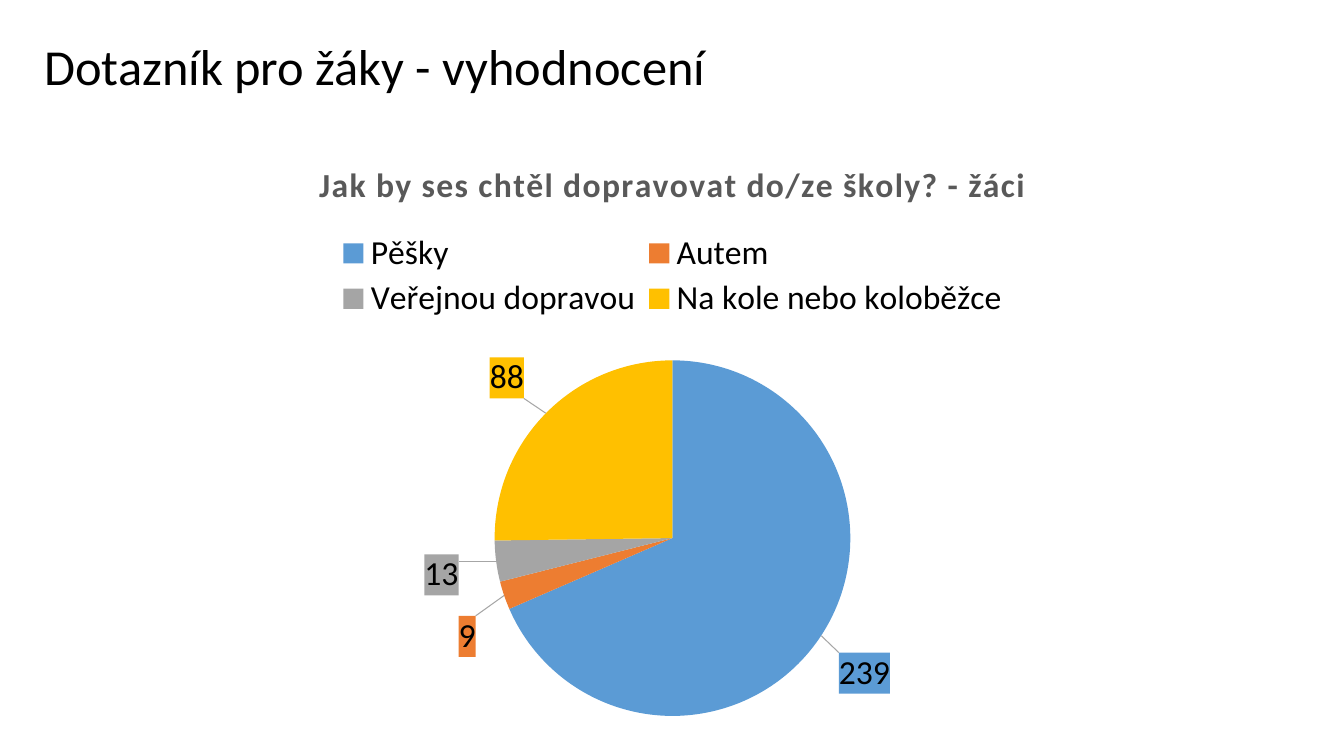
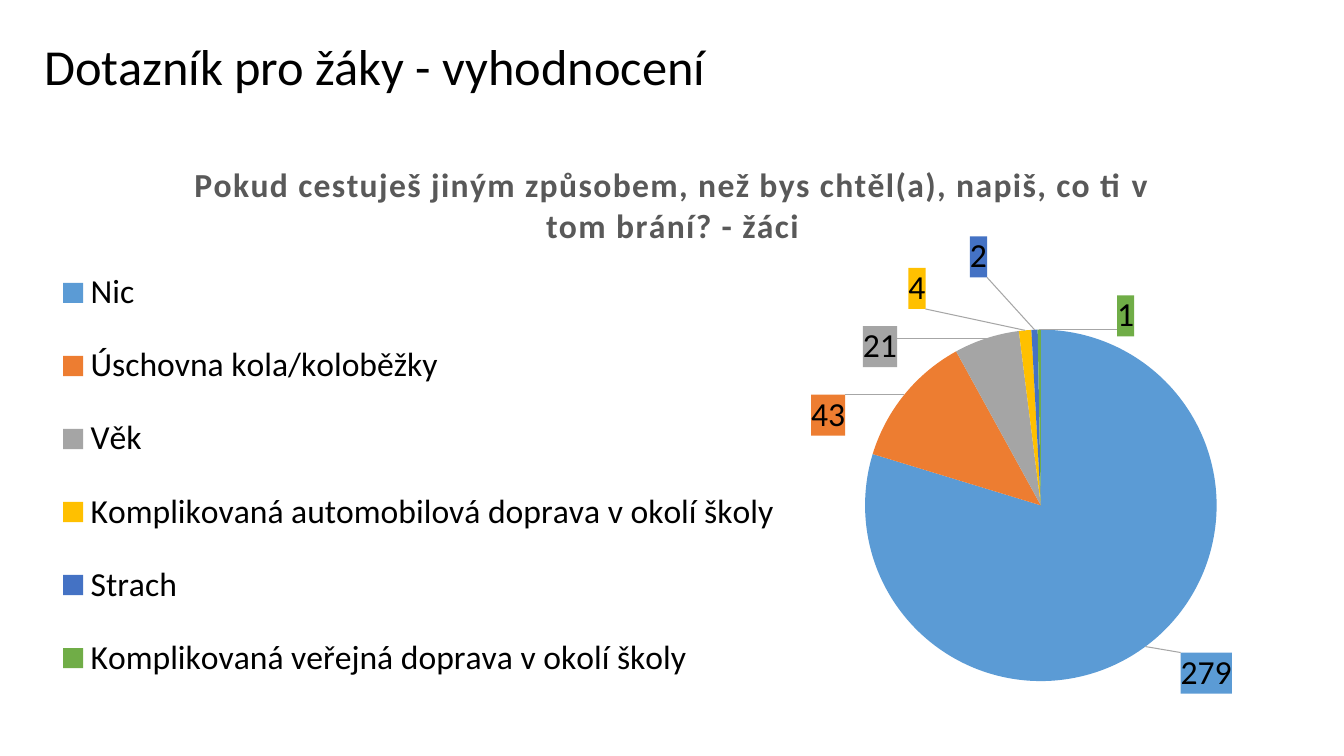
from lxml import etree
from pptx import Presentation
from pptx.chart.data import CategoryChartData
from pptx.dml.color import RGBColor
from pptx.enum.chart import XL_CHART_TYPE, XL_LABEL_POSITION, XL_LEGEND_POSITION
from pptx.enum.text import MSO_ANCHOR
from pptx.oxml import parse_xml
from pptx.oxml.ns import nsdecls, qn
from pptx.util import Inches, Pt

PIE = XL_CHART_TYPE.PIE
OUTSIDE = XL_LABEL_POSITION.OUTSIDE_END
TOP = XL_LEGEND_POSITION.TOP
MIDDLE = MSO_ANCHOR.MIDDLE

COLORS = {
    "text": "000000", "question": "595959", "leader": "A6A6A6",
    "blue": "5B9BD5", "orange": "ED7D31", "gray": "A5A5A5",
    "yellow": "FFC000", "navy": "4472C4", "green": "70AD47",
}
SLICES = ["blue", "orange", "gray", "yellow", "navy", "green"]
WIDTH, HEIGHT = 13.33, 7.5
TITLE_BOX = (0.34, 0, 12.99, 1.38)
CHART_BOX = (0.37, 1.38, 12.6, 5.91)
TITLE = "Dotazník pro žáky - vyhodnocení"
TITLE_FONT = {"name": "Calibri", "size": Pt(36)}
CHART_FONT = {"name": "Calibri", "size": Pt(24), "bold": False}
QUESTION_FONT = {"name": "Calibri", "size": Pt(24), "bold": True}

# Plot and legend: x, y, w, h as shares of the chart.
# Answers: text, count, label shift right and down in percent of the chart.
QUESTIONS = [
    {
        "question": "Jak by ses chtěl dopravovat do/ze školy? - žáci",
        "plot": (0.36, 0.37, 0.28, 0.6),
        "legend": (0.23, 0.15, 0.54, 0.16),
        "answers": [
            ("Pěšky", 239, 1, 2.3),
            ("Autem", 9, -1.8, 3.1),
            ("Veřejnou dopravou", 13, -2.5, -1.3),
            ("Na kole nebo koloběžce", 88, -1.4, -1.8),
        ],
    },
    {
        "question": "Pokud cestuješ jiným způsobem, než bys chtěl(a), "
                    "napiš, co ti v tom brání? - žáci",
        "plot": (0.65, 0.32, 0.28, 0.59),
        "legend": (0.01, 0.17, 0.58, 0.79),
        "answers": [
            ("Nic", 279, 2.5, 0.2),
            ("Úschovna kola/koloběžky", 43, -4.3, 7.5),
            ("Věk", 21, -6.9, 5.8),
            ("Komplikovaná automobilová doprava v okolí školy", 4, -7.8, -2.6),
            ("Strach", 2, -4.4, -7.8),
            ("Komplikovaná veřejná doprava v okolí školy", 1, 6.8, 2.1),
        ],
    },
]


def style(font, values, color):
    for name, value in values.items():
        setattr(font, name, value)
    font.color.rgb = RGBColor.from_string(COLORS[color])


def manual_layout(tags, values):
    layout = parse_xml(f"<c:layout {nsdecls('c')}><c:manualLayout/></c:layout>")
    for tag, value in zip(tags, values):
        etree.SubElement(layout[0], qn(f"c:{tag}")).set("val", str(value))
    return layout


deck = Presentation()
deck.slide_width, deck.slide_height = Inches(WIDTH), Inches(HEIGHT)

for item in QUESTIONS:
    page = deck.slides.add_slide(deck.slide_layouts[6])

    # Slide title
    box = page.shapes.add_textbox(*map(Inches, TITLE_BOX))
    frame = box.text_frame
    frame.word_wrap = True
    frame.vertical_anchor = MIDDLE
    para = frame.paragraphs[0]
    para.line_spacing = 0.9
    span = para.add_run()
    span.text = TITLE
    style(span.font, TITLE_FONT, "text")

    # Pie chart
    names, counts, *_ = zip(*item["answers"])
    data = CategoryChartData()
    data.categories = names
    data.add_series("Series 1", counts)
    chart = page.shapes.add_chart(PIE, *map(Inches, CHART_BOX), data).chart
    style(chart.font, CHART_FONT, "text")
    plot = chart.plots[0]
    plot.vary_by_categories = True

    # Question above the pie
    chart.has_title = True
    chart.chart_title.include_in_layout = False
    span = chart.chart_title.text_frame.paragraphs[0].add_run()
    span.text = item["question"]
    style(span.font, QUESTION_FONT, "question")
    span.font._element.set("spc", "100")

    # Legend and plot areas
    chart.has_legend = True
    legend = chart.legend
    legend.position = TOP
    legend.include_in_layout = False
    style(legend.font, CHART_FONT, "text")
    edges = ("xMode", "yMode", "x", "y", "w", "h")
    legend_xml = legend._element
    for old in legend_xml.findall(qn("c:layout")):
        legend_xml.remove(old)
    legend_xml.find(qn("c:legendPos")).addnext(
        manual_layout(edges, ("edge", "edge", *item["legend"])))
    area = chart._chartSpace.chart.plotArea
    for old in area.findall(qn("c:layout")):
        area.remove(old)
    area.insert(0, manual_layout(
        ("layoutTarget", *edges), ("inner", "edge", "edge", *item["plot"])))

    # Slices with labels in matching colours
    series = plot.series[0]
    labels = series.data_labels
    labels.show_value = True
    labels.position = OUTSIDE
    style(labels.font, CHART_FONT, "text")
    for index, (_, _, right, down) in enumerate(item["answers"]):
        color = COLORS[SLICES[index]]
        point = series.points[index]
        point.format.fill.solid()
        point.format.fill.fore_color.rgb = RGBColor.from_string(color)
        point.data_label.position = OUTSIDE
        style(point.data_label.font, CHART_FONT, "text")
        label = labels._element.findall(qn("c:dLbl"))[index]
        for old in label.findall(qn("c:spPr")):
            label.remove(old)
        shift = manual_layout("xy", (round(right / 100, 3), round(down / 100, 3)))
        label.find(qn("c:idx")).addnext(shift)
        shift.addnext(parse_xml(
            f"<c:spPr {nsdecls('c', 'a')}><a:solidFill>"
            f'<a:srgbClr val="{color}"/></a:solidFill></c:spPr>'))

    # Leader lines
    for old in labels._element.findall(qn("c:showLeaderLines")):
        labels._element.remove(old)
    show = etree.SubElement(labels._element, qn("c:showLeaderLines"))
    show.set("val", "1")
    show.addnext(parse_xml(
        f"<c:leaderLines {nsdecls('c', 'a')}><c:spPr>"
        f'<a:ln w="9525"><a:solidFill><a:srgbClr val="{COLORS["leader"]}"/>'
        "</a:solidFill></a:ln></c:spPr></c:leaderLines>"))

deck.save("out.pptx")
